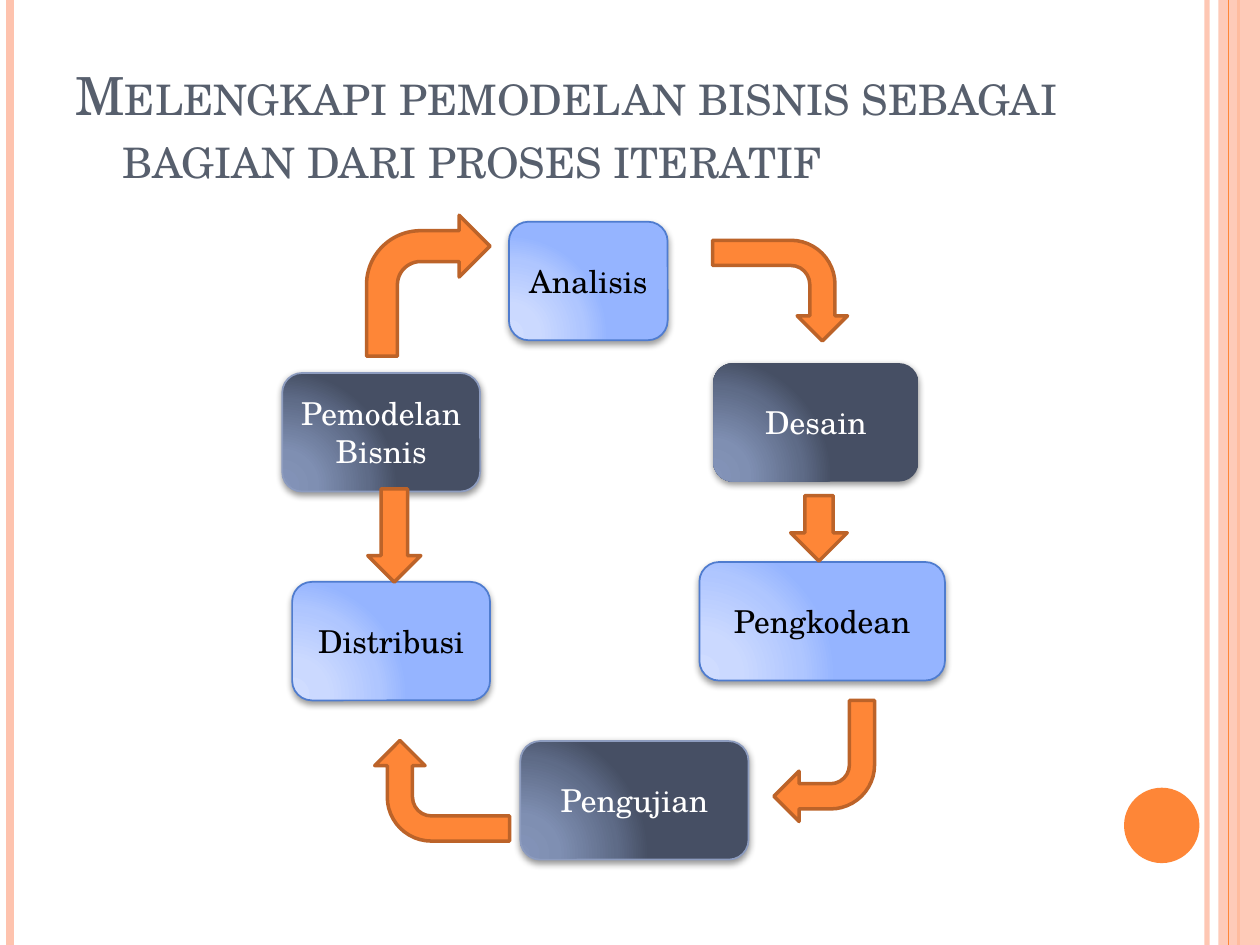
"""Build a slide showing business modelling as part of an iterative process."""
from dataclasses import dataclass

import pptx
import pptx.dml.color
import pptx.enum.shapes
import pptx.enum.text
import pptx.oxml
import pptx.oxml.ns
import pptx.util
from lxml import etree

Cm = pptx.util.Cm
Pt = pptx.util.Pt
Shape = pptx.enum.shapes.MSO_SHAPE
Align = pptx.enum.text.PP_ALIGN
Anchor = pptx.enum.text.MSO_ANCHOR
qn = pptx.oxml.ns.qn


@dataclass(frozen=True)
class Theme:
    font: str = "TeX Gyre Schola"
    title_size: float = 30
    step_size: float = 18
    title: str = "575F6D"
    orange: str = "FE8637"
    arrow_edge: str = "BC6329"
    peach: str = "FEC3AE"


@dataclass(frozen=True)
class StepStyle:
    stops: tuple
    edge: str
    ink: str
    shadow_alpha: int
    shadow_distance: float


@dataclass(frozen=True)
class Step:
    label: str
    left: float
    top: float
    width: float
    style: StepStyle
    outlined: bool = True


@dataclass(frozen=True)
class Arrow:
    kind: Shape
    left: float
    top: float
    width: float
    height: float
    rotation: float = 0


@dataclass(frozen=True)
class Stripe:
    x: float
    color: str
    weight: float
    alpha: int = 100


THEME = Theme()
SLIDE_WIDTH, SLIDE_HEIGHT = 25.4, 19.05
STEP_HEIGHT = 2.39
STOP_POSITIONS = (0, 30, 75, 100)
DARK = StepStyle(("8494B9", "7F8FB2", "5E6B87", "464F64"), "8D9CBF", "FFFFFF", 42, 1.6)
LIGHT = StepStyle(("CFDCFF", "CBD9FF", "AFC6FF", "95B4FF"), "4F7CCF", "000000", 40, 2)

STRIPES = (
    Stripe(24.33, THEME.peach, 3, 93),
    Stripe(0.2, THEME.peach, 4.5),
    Stripe(24.97, THEME.orange, 1.5),
)
INNER_STRIPE = Stripe(24.77, THEME.orange, 0.75)
STEPS = (
    Step("Desain", 14.38, 7.32, 4.14, DARK, outlined=False),
    Step("Analisis", 10.26, 4.47, 3.2, LIGHT),
    Step("Pemodelan Bisnis", 5.69, 7.52, 3.99, DARK),
    Step("Pengkodean", 14.1, 11.33, 4.95, LIGHT),
    Step("Distribusi", 5.89, 11.73, 3.99, LIGHT),
    Step("Pengujian", 10.49, 14.94, 4.6, DARK),
)
ARROWS = (
    Arrow(Shape.BENT_ARROW, 7.39, 4.34, 2.49, 2.84),
    Arrow(Shape.BENT_ARROW, 15.6, 14.12, 2.03, 2.44, 180),
    Arrow(Shape.BENT_ARROW, 7.9, 14.58, 2.03, 2.72, 270),
    Arrow(Shape.BENT_ARROW, 14.71, 4.5, 2.03, 2.72, 90),
    Arrow(Shape.LEFT_ARROW, 15.85, 10.08, 1.32, 1.14, 270),
    Arrow(Shape.LEFT_ARROW, 7.01, 10.26, 1.88, 1.07, 270),
)


def rgb(color: str):
    return pptx.dml.color.RGBColor.from_string(color)


def set_alpha(element, percent: int) -> None:
    if percent < 100:
        color = next(element.iter(qn("a:srgbClr")))
        etree.SubElement(color, qn("a:alpha"), val=str(percent * 1000))


def write_text(shape, text: str, *, size: float, color: str, align=Align.LEFT,
               anchor=Anchor.MIDDLE, hanging: float = 0, small_caps: bool = False) -> None:
    frame = shape.text_frame
    frame.word_wrap = True
    frame.vertical_anchor = anchor
    paragraph = frame.paragraphs[0]
    paragraph.alignment = align
    if hanging:
        properties = paragraph._p.get_or_add_pPr()
        properties.set("marL", str(Cm(hanging)))
        properties.set("indent", str(-Cm(hanging)))
    run = paragraph.add_run()
    run.text = text
    run.font.name = THEME.font
    run.font.size = Pt(size)
    run.font.color.rgb = rgb(color)
    if small_caps:
        run._r.get_or_add_rPr().set("cap", "small")


def add_shape(slide, kind, left: float, top: float, width: float, height: float,
              fill: str, edge: str = "", weight: float = 0):
    shape = slide.shapes.add_shape(kind, Cm(left), Cm(top), Cm(width), Cm(height))
    shape.shadow.inherit = False
    shape.fill.solid()
    shape.fill.fore_color.rgb = rgb(fill)
    if edge:
        shape.line.color.rgb = rgb(edge)
        shape.line.width = Pt(weight)
    else:
        shape.line.fill.background()
    return shape


def add_stripe(slide, stripe: Stripe) -> None:
    line = slide.shapes.add_connector(
        pptx.enum.shapes.MSO_CONNECTOR.STRAIGHT,
        Cm(stripe.x), Cm(0), Cm(stripe.x), Cm(SLIDE_HEIGHT))
    line.line.color.rgb = rgb(stripe.color)
    line.line.width = Pt(stripe.weight)
    properties = line._element.spPr
    set_alpha(properties, stripe.alpha)
    etree.SubElement(properties, qn("a:effectLst"))


def add_step(slide, step: Step) -> None:
    style = step.style
    box = add_shape(slide, Shape.ROUNDED_RECTANGLE, step.left, step.top, step.width,
                    STEP_HEIGHT, style.stops[-1], style.edge if step.outlined else "", 1)
    properties = box._element.spPr
    stops = "".join(
        f'<a:gs pos="{position * 1000}"><a:srgbClr val="{color}"/></a:gs>'
        for position, color in zip(STOP_POSITIONS, style.stops))
    gradient = pptx.oxml.parse_xml(
        f'<a:gradFill {pptx.oxml.ns.nsdecls("a")} rotWithShape="1"><a:gsLst>{stops}</a:gsLst>'
        '<a:path path="circle"><a:fillToRect l="5000" t="100000" r="120000" b="10000"/>'
        '</a:path></a:gradFill>')
    properties.replace(properties.find(qn("a:solidFill")), gradient)
    shadow = etree.SubElement(
        properties.find(qn("a:effectLst")), qn("a:outerShdw"), blurRad=str(Pt(4)),
        dist=str(Pt(style.shadow_distance)), dir="5400000", rotWithShape="0")
    etree.SubElement(shadow, qn("a:srgbClr"), val="000000")
    set_alpha(shadow, style.shadow_alpha)
    write_text(box, step.label, size=THEME.step_size, color=style.ink, align=Align.CENTER)


def add_arrow(slide, arrow: Arrow) -> None:
    shape = add_shape(slide, arrow.kind, arrow.left, arrow.top, arrow.width, arrow.height,
                      THEME.orange, THEME.arrow_edge, 2)
    shape.rotation = arrow.rotation


def main() -> None:
    deck = pptx.Presentation()
    deck.slide_width, deck.slide_height = Cm(SLIDE_WIDTH), Cm(SLIDE_HEIGHT)
    slide = deck.slides.add_slide(deck.slide_layouts[6])
    for stripe in STRIPES:
        add_stripe(slide, stripe)
    band = add_shape(slide, Shape.RECTANGLE, 24.56, 0, 0.84, SLIDE_HEIGHT, THEME.peach)
    set_alpha(band._element.spPr, 87)
    add_stripe(slide, INNER_STRIPE)
    add_shape(slide, Shape.OVAL, 22.66, 15.88, 1.52, 1.52, THEME.orange)
    title = slide.shapes.add_textbox(Cm(1.27), Cm(0.76), Cm(20.75), Cm(3.18))
    write_text(title, "Melengkapi pemodelan bisnis sebagai bagian dari proses iteratif",
               size=THEME.title_size, color=THEME.title, anchor=Anchor.BOTTOM,
               hanging=0.96, small_caps=True)
    for step in STEPS:
        add_step(slide, step)
    for arrow in ARROWS:
        add_arrow(slide, arrow)
    deck.save("out.pptx")


if __name__ == "__main__":
    main()
